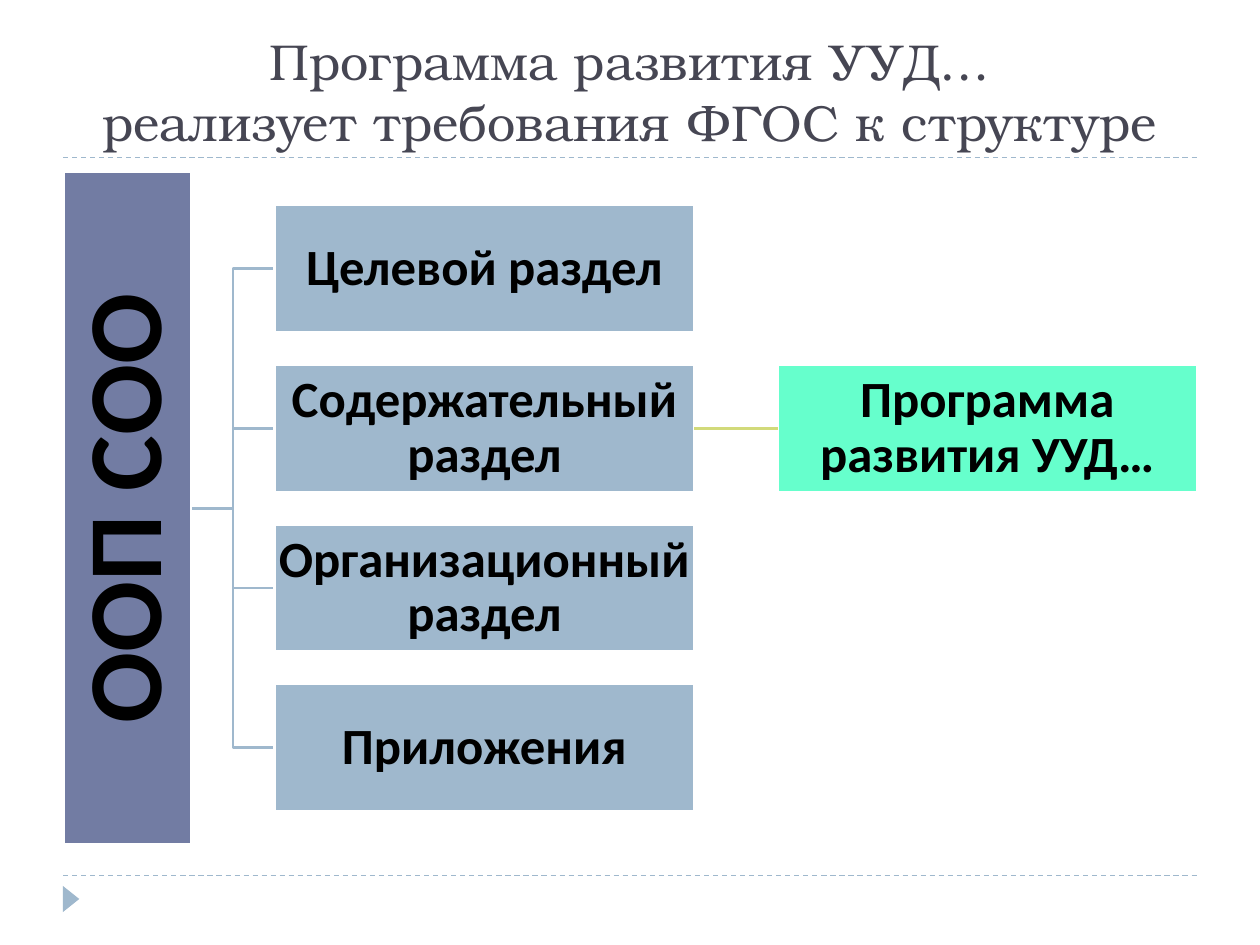
from lxml import etree
from pptx import Presentation
from pptx.dml.color import RGBColor
from pptx.enum import dml, shapes, text
from pptx.oxml import ns
from pptx.util import Pt

BLACK = RGBColor(0x00, 0x00, 0x00)
WHITE = RGBColor(0xFF, 0xFF, 0xFF)
TITLE_GREY = RGBColor(0x46, 0x46, 0x53)
PALE_BLUE = RGBColor(0x9F, 0xB8, 0xCD)
SLATE = RGBColor(0x72, 0x7C, 0xA3)
MINT = RGBColor(0x66, 0xFF, 0xCC)
LIME = RGBColor(0xD2, 0xDA, 0x7A)

SECTIONS = [
    "Целевой раздел",
    "Содержательный раздел",
    "Организационный раздел",
    "Приложения",
]
MARGIN, CONTENT_WIDTH = 36, 648
SECTION_LEFT, PROGRAM_LEFT = 157, 444.4
BOX_WIDTH, BOX_HEIGHT, BOX_PITCH = 239.8, 72.7, 91.2
ROOT_LENGTH, ROOT_CENTER, TREE_MIDDLE = 384.5, 72.8, 290.4


def write(shape, words, size, font="Calibri", color=BLACK, bold=True,
          anchor=text.MSO_ANCHOR.MIDDLE, inset=None, spacing=None):
    frame = shape.text_frame
    frame.word_wrap = True
    frame.auto_size = text.MSO_AUTO_SIZE.NONE
    frame.vertical_anchor = anchor
    if inset is not None:
        frame.margin_left = frame.margin_right = Pt(inset)
        frame.margin_top = frame.margin_bottom = Pt(inset)
    frame.text = words
    paragraph = frame.paragraphs[0]
    paragraph.alignment = text.PP_ALIGN.CENTER
    if spacing:
        paragraph.line_spacing = spacing
    for run in paragraph.runs:
        run.font.name = font
        run.font.size = Pt(size)
        run.font.bold = bold
        run.font.color.rgb = color


def add_filled(slide, kind, left, top, width, height, fill, rotation=0):
    shape = slide.shapes.add_shape(kind, Pt(left), Pt(top), Pt(width), Pt(height))
    shape.shadow.inherit = False
    shape.rotation = rotation
    shape.fill.solid()
    shape.fill.fore_color.rgb = fill
    shape.line.fill.background()
    return shape


def add_box(slide, words, left, top, width=BOX_WIDTH, fill=PALE_BLUE,
            size=29, inset=1.44, rotation=0):
    box = add_filled(slide, shapes.MSO_SHAPE.RECTANGLE, left, top,
                     width, BOX_HEIGHT, fill, rotation)
    box.line.color.rgb = WHITE
    box.line.width = Pt(1.5)
    write(box, words, size, inset=inset, spacing=0.9)
    return box


def add_line(slide, start, end, color=PALE_BLUE, width=1.5, dash=None,
             kind=shapes.MSO_CONNECTOR.STRAIGHT):
    line = slide.shapes.add_connector(kind, *map(Pt, (*start, *end)))
    line.line.color.rgb = color
    line.line.width = Pt(width)
    if dash:
        line.line.dash_style = dash
    etree.SubElement(line._element.spPr, ns.qn("a:effectLst"))
    return line


def add_frame(slide):
    """Dashed rules under the title and above the footer, with the page marker."""
    for y in (90, 500.4):
        add_line(slide, (MARGIN, y), (MARGIN + CONTENT_WIDTH, y), width=0.75,
                 dash=dml.MSO_LINE.DASH)
    add_filled(slide, shapes.MSO_SHAPE.ISOSCELES_TRIANGLE, 33.1, 509, 15, 9.4,
               PALE_BLUE, rotation=90)


def add_title(slide, words):
    title = slide.shapes.title
    title.left, title.top = Pt(MARGIN), Pt(12.2)
    title.width, title.height = Pt(CONTENT_WIDTH), Pt(77.8)
    write(title, words, 28.8, font="TeX Gyre Bonum", color=TITLE_GREY,
          bold=False, anchor=text.MSO_ANCHOR.BOTTOM)


def add_tree(slide):
    first_middle = TREE_MIDDLE - BOX_PITCH * (len(SECTIONS) - 1) / 2
    middles = [first_middle + row * BOX_PITCH for row in range(len(SECTIONS))]
    root_right = ROOT_CENTER + BOX_HEIGHT / 2
    for middle in middles:
        add_line(slide, (root_right, TREE_MIDDLE), (SECTION_LEFT, middle),
                 kind=shapes.MSO_CONNECTOR.ELBOW)

    # The root is laid out flat, then turned about its centre.
    add_box(slide, "ООП СОО", ROOT_CENTER - ROOT_LENGTH / 2,
            TREE_MIDDLE - BOX_HEIGHT / 2, width=ROOT_LENGTH, fill=SLATE,
            size=60, inset=2.88, rotation=270)
    sections = [add_box(slide, name, SECTION_LEFT, middle - BOX_HEIGHT / 2)
                for name, middle in zip(SECTIONS, middles)]

    program_middle = middles[1]
    program = add_box(slide, "Программа развития УУД…", PROGRAM_LEFT,
                      program_middle - BOX_HEIGHT / 2, fill=MINT)
    link = add_line(slide, (SECTION_LEFT + BOX_WIDTH, program_middle),
                    (PROGRAM_LEFT, program_middle), color=LIME)
    link.begin_connect(sections[1], 3)
    link.end_connect(program, 1)


def main():
    deck = Presentation()
    deck.slide_width, deck.slide_height = Pt(720), Pt(540)
    slide = deck.slides.add_slide(deck.slide_layouts[5])
    add_frame(slide)
    add_title(slide, "Программа развития УУД…\vреализует требования ФГОС к структуре")
    add_tree(slide)
    deck.save("out.pptx")


if __name__ == "__main__":
    main()
